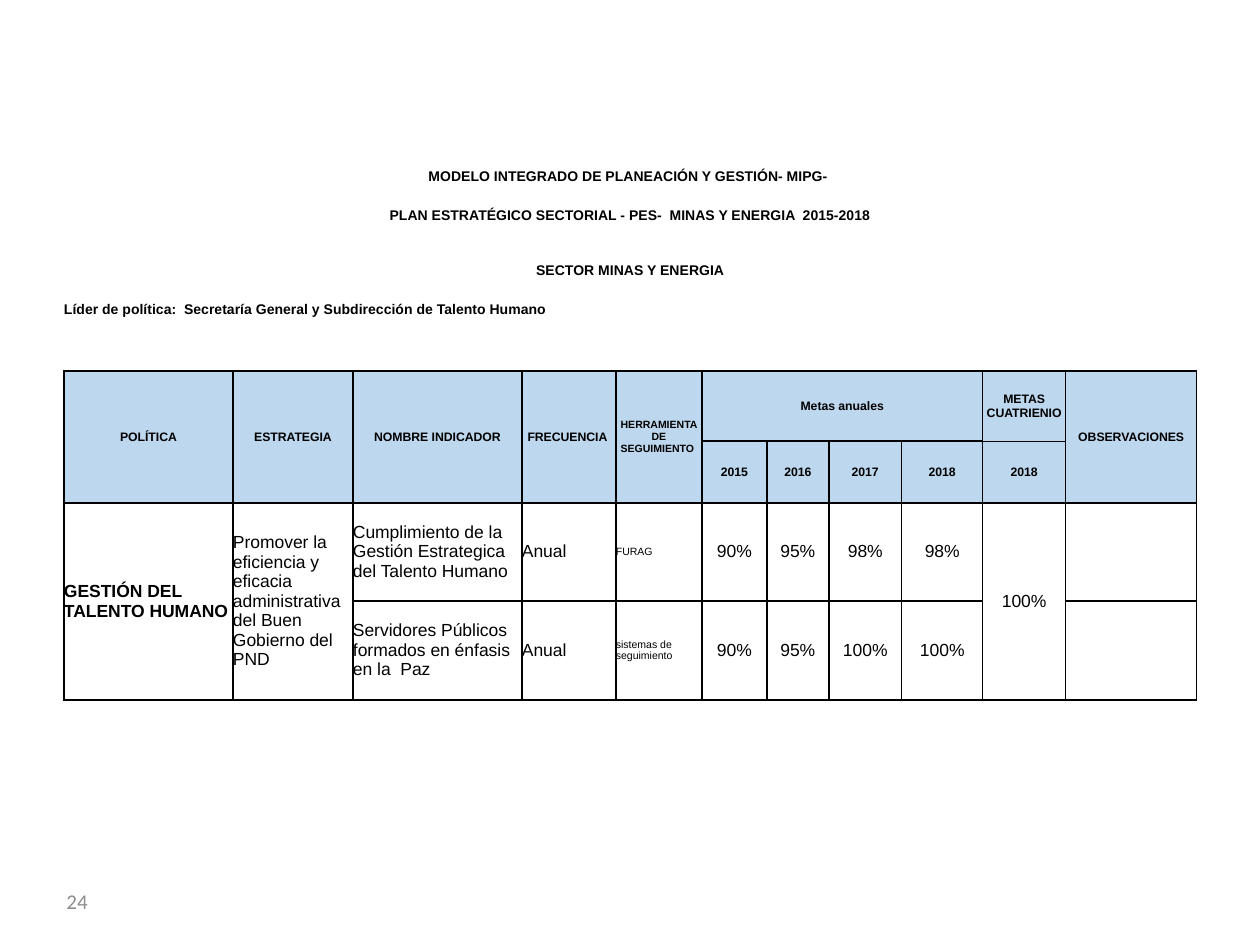
from lxml.etree import SubElement
from pptx import Presentation
from pptx.dml.color import RGBColor
from pptx.enum.text import MSO_ANCHOR as Anchor, PP_ALIGN as Align
from pptx.oxml.ns import qn
from pptx.util import Emu, Pt

PX = 914400 // 126
BLACK = RGBColor(0x00, 0x00, 0x00)
GRAY = RGBColor(0x8E, 0x8E, 0x8E)
HEADER_BLUE = RGBColor(0xBD, 0xD7, 0xEE)
WHITE = RGBColor(0xFF, 0xFF, 0xFF)

COLUMN_WIDTHS = [169, 120, 169, 94, 86, 52, 13, 39, 23, 23, 50, 81, 83, 131]
ROW_HEIGHTS = [39, 39, 56, 39, 53, 70, 62, 98, 99]
TITLES = [
    "MODELO INTEGRADO DE PLANEACIÓN Y GESTIÓN- MIPG- ",
    "PLAN ESTRATÉGICO SECTORIAL - PES-  MINAS Y ENERGIA  2015-2018",
    "SECTOR MINAS Y ENERGIA",
]
LEADER = "Líder de política:  Secretaría General y Subdirección de Talento Humano"
HEADINGS = [
    "POLÍTICA", "ESTRATEGIA", "NOMBRE INDICADOR", "FRECUENCIA ",
    "HERRAMIENTA DE SEGUIMIENTO ",
]
YEARS = ["2015", "2016", "2017", "2018"]
YEAR_SPANS = [(5, 2), (7, 2), (9, 2), (11, 1)]
INDICATORS = [
    ("Cumplimiento de la Gestión Estrategica del Talento Humano", "Anual",
     "FURAG", ["90%", "95%", "98%", "98%"]),
    ("Servidores Públicos formados en énfasis en la  Paz", "Anual",
     "sistemas de seguimiento", ["90%", "95%", "100%", "100%"]),
]
POLICY = "GESTIÓN DEL TALENTO HUMANO"
STRATEGY = ("Promover la eficiencia y eficacia administrativa "
            "del Buen Gobierno del PND")
SPACER_ROW, HEAD_ROW, YEAR_ROW, BODY_ROW = 4, 5, 6, 7
TOOL_COL, GOAL_COL, NOTES_COL = 4, 12, 13
NO_GRID_STYLE = "{2D5ABB26-0587-4C30-8999-92F81FD0307C}"


def px(length):
    return Emu(length * PX)


def write_text(frame, text, size=10, bold=False, align=Align.LEFT,
               font="Arial", color=BLACK):
    paragraph = frame.paragraphs[0]
    paragraph.alignment = align
    run = paragraph.add_run()
    run.text = text
    run.font.size = Pt(size)
    run.font.bold = bold
    run.font.name = font
    run.font.color.rgb = color


def put(table, row, col, text, rows=1, cols=1, anchor=Anchor.MIDDLE, **style):
    cell = table.cell(row, col)
    if rows * cols > 1:
        cell.merge(table.cell(row + rows - 1, col + cols - 1))
    cell.vertical_anchor = anchor
    if text:
        write_text(cell.text_frame, text, **style)


def add_border(cell, side, points):
    line = SubElement(cell._tc.get_or_add_tcPr(), qn("a:ln" + side),
                      w=str(Pt(points)))
    fill = SubElement(line, qn("a:solidFill"))
    SubElement(fill, qn("a:srgbClr"), val=str(BLACK))


def format_cell(cell, row, col):
    cell.margin_left = cell.margin_right = 0
    cell.margin_top = cell.margin_bottom = 0
    sides = "LRTB" if row >= HEAD_ROW else "B" if row == SPACER_ROW else ""
    for side in sides:
        thin = (row, col, side) in [(HEAD_ROW, GOAL_COL, "B"),
                                    (YEAR_ROW, GOAL_COL, "T")]
        add_border(cell, side, 0.5 if thin else 1)
    if row in (HEAD_ROW, YEAR_ROW):
        cell.fill.solid()
        cell.fill.fore_color.rgb = HEADER_BLUE
    elif (row, col) == (SPACER_ROW, 0):
        cell.fill.solid()
        cell.fill.fore_color.rgb = WHITE
    else:
        cell.fill.background()


def add_grid(slide):
    table = slide.shapes.add_table(
        len(ROW_HEIGHTS), len(COLUMN_WIDTHS), px(64), px(145),
        px(sum(COLUMN_WIDTHS)), px(sum(ROW_HEIGHTS))).table
    table.first_row = table.horz_banding = False
    table._tbl.tblPr.find(qn("a:tableStyleId")).text = NO_GRID_STYLE
    for column, width in zip(table.columns, COLUMN_WIDTHS):
        column.width = px(width)
    for row, height in enumerate(ROW_HEIGHTS):
        table.rows[row].height = px(height)
        for col in range(len(COLUMN_WIDTHS)):
            format_cell(table.cell(row, col), row, col)
    return table


def fill_titles(table):
    style = dict(size=8, bold=True, anchor=Anchor.BOTTOM)
    for row, title in enumerate(TITLES):
        put(table, row, 0, title, cols=len(COLUMN_WIDTHS),
            align=Align.CENTER, **style)
    put(table, len(TITLES), 0, LEADER, cols=4, **style)
    for row in (len(TITLES), SPACER_ROW):
        for col in (6, 8, 10):
            put(table, row, col, "", cols=2)


def fill_header(table):
    style = dict(bold=True, align=Align.CENTER)
    for col, heading in enumerate(HEADINGS):
        put(table, HEAD_ROW, col, heading, rows=2,
            size=6 if col == TOOL_COL else 7, **style)
    style["size"] = 7
    put(table, HEAD_ROW, 5, "Metas anuales", cols=7, **style)
    put(table, HEAD_ROW, GOAL_COL, "METAS CUATRIENIO", **style)
    put(table, HEAD_ROW, NOTES_COL, "OBSERVACIONES", rows=2, **style)
    for (col, span), year in zip(YEAR_SPANS, YEARS):
        put(table, YEAR_ROW, col, year, cols=span, **style)
    put(table, YEAR_ROW, GOAL_COL, "2018", **style)


def fill_body(table):
    put(table, BODY_ROW, 0, POLICY, rows=2, bold=True)
    put(table, BODY_ROW, 1, STRATEGY, rows=2)
    put(table, BODY_ROW, GOAL_COL, "100%", rows=2, align=Align.CENTER)
    for row, (name, frequency, tool, goals) in enumerate(INDICATORS, BODY_ROW):
        put(table, row, 2, name)
        put(table, row, 3, frequency)
        put(table, row, TOOL_COL, tool, size=6)
        for (col, span), goal in zip(YEAR_SPANS, goals):
            put(table, row, col, goal, cols=span, align=Align.CENTER)


def add_page_number(slide, number):
    frame = slide.shapes.add_textbox(px(54), px(876), px(294), px(50)).text_frame
    frame.word_wrap = True
    frame.vertical_anchor = Anchor.MIDDLE
    write_text(frame, number, size=12, font="Calibri", color=GRAY)


def main():
    deck = Presentation()
    deck.slide_width, deck.slide_height = px(1260), px(945)
    slide = deck.slides.add_slide(deck.slide_layouts[6])
    add_page_number(slide, "24")
    table = add_grid(slide)
    fill_titles(table)
    fill_header(table)
    fill_body(table)
    deck.save("out.pptx")


if __name__ == "__main__":
    main()
